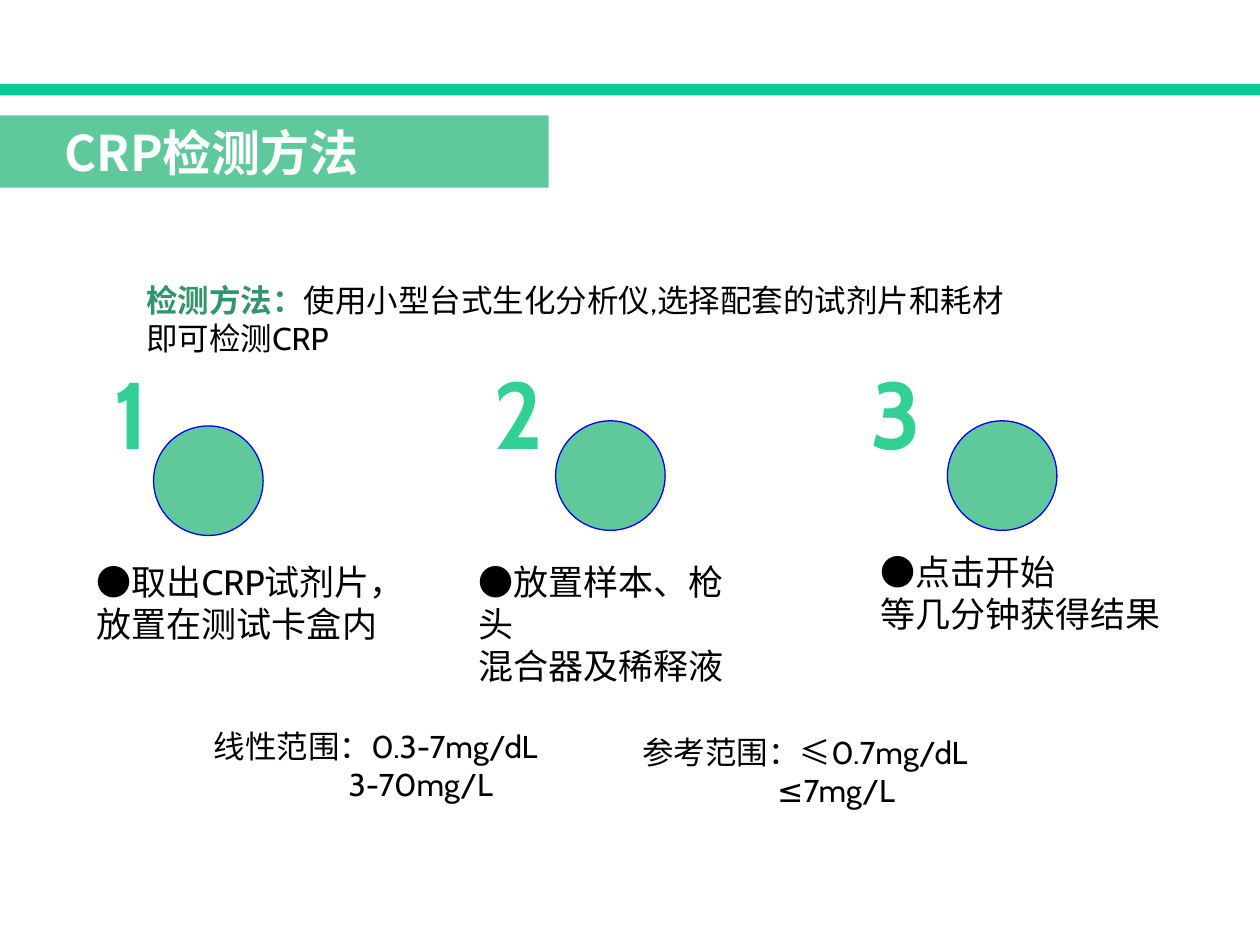
"""Build the CRP test method slide."""
from pptx import Presentation
from pptx.dml.color import RGBColor
from pptx.enum.shapes import MSO_SHAPE as Shape
from pptx.enum.text import MSO_ANCHOR as Anchor, PP_ALIGN as Align
from pptx.oxml.ns import qn
from pptx.util import Pt
from lxml.etree import SubElement

TEAL = RGBColor(0x00, 0xCC, 0x99)
GREEN = RGBColor(0x60, 0xC9, 0x9C)
DARK_GREEN = RGBColor(0x32, 0x94, 0x6A)
BRIGHT_GREEN = RGBColor(0x33, 0xD0, 0x95)
BLUE = RGBColor(0x00, 0x00, 0xFF)
BLACK = RGBColor(0x00, 0x00, 0x00)
WHITE = RGBColor(0xFF, 0xFF, 0xFF)
LATIN = "Cabin"
CHINESE = "Noto Sans CJK SC"

deck = Presentation()
deck.slide_width, deck.slide_height = Pt(720), Pt(540)
page = deck.slides.add_slide(deck.slide_layouts[6])


def add_figure(kind, left, top, width, height, color):
    figure = page.shapes.add_shape(kind, Pt(left), Pt(top), Pt(width), Pt(height))
    figure.shadow.inherit = False
    figure.fill.solid()
    figure.fill.fore_color.rgb = color
    figure.line.fill.background()
    return figure


def add_span(para, text, size, color=BLACK, bold=False, font=LATIN):
    span = para.add_run()
    span.text = text
    span.font.size = Pt(size)
    span.font.bold = bold
    span.font.name = font
    span.font.color.rgb = color
    SubElement(span.font._element, qn("a:ea")).set("typeface", CHINESE)


add_figure(Shape.RECTANGLE, 0, 48, 720, 6.5, TEAL)
banner = add_figure(Shape.RECTANGLE, 0, 66, 313.5, 41.3, GREEN).text_frame
banner.margin_left = Pt(37)
banner.margin_top = banner.margin_bottom = 0
banner.vertical_anchor = Anchor.MIDDLE
banner.paragraphs[0].alignment = Align.LEFT
add_span(banner.paragraphs[0], "CRP检测方法", 28, WHITE, True, CHINESE)

method = page.shapes.add_textbox(Pt(76.5), Pt(157), Pt(521.5), Pt(51)).text_frame
method.word_wrap = True
add_span(method.paragraphs[0], "检测方法：", 18, DARK_GREEN, True)
add_span(method.paragraphs[0], "使用小型台式生化分析仪,选择配套的试剂片和耗材即可检测CRP", 18)

steps = [
    ("1", 54, (87.8, 243.4), (48.2, 316.8, 187.2), ("●取出CRP试剂片，", "放置在测试卡盒内")),
    ("2", 275, (317.5, 240.5), (266.4, 316.8, 172.8), ("●放置样本、枪头", "混合器及稀释液")),
    ("3", 490.3, (541.4, 240.5), (496.1, 311.3, 175.7), ("●点击开始", "等几分钟获得结果")),
]
for digit, digit_left, (dot_left, dot_top), (left, top, width), lines in steps:
    dot = add_figure(Shape.OVAL, dot_left, dot_top, 62.6, 62.6, GREEN)
    dot.line.color.rgb = BLUE
    dot.line.width = Pt(0.75)

    number = page.shapes.add_textbox(Pt(digit_left), Pt(199.5), Pt(41.8), Pt(72.7)).text_frame
    number.word_wrap = False
    number.paragraphs[0].alignment = Align.CENTER
    add_span(number.paragraphs[0], digit, 54, BRIGHT_GREEN, True)

    caption = page.shapes.add_textbox(Pt(left), Pt(top), Pt(width), Pt(55.5)).text_frame
    caption.word_wrap = True
    add_span(caption.paragraphs[0], lines[0], 20)
    add_span(caption.add_paragraph(), lines[1], 20)

ranges = [
    (115.2, 411.8, "线性范围：0.3-7mg/dL", "3-70mg/L"),
    (360, 415.4, "参考范围：≤0.7mg/dL", "≤7mg/L"),
]
for left, top, first, second in ranges:
    box = page.shapes.add_textbox(Pt(left), Pt(top), Pt(230.4), Pt(51)).text_frame
    box.word_wrap = True
    add_span(box.paragraphs[0], first, 18)
    para = box.add_paragraph()
    para._p.get_or_add_pPr().set("marL", str(Pt(77)))
    add_span(para, second, 18)

deck.save("out.pptx")
